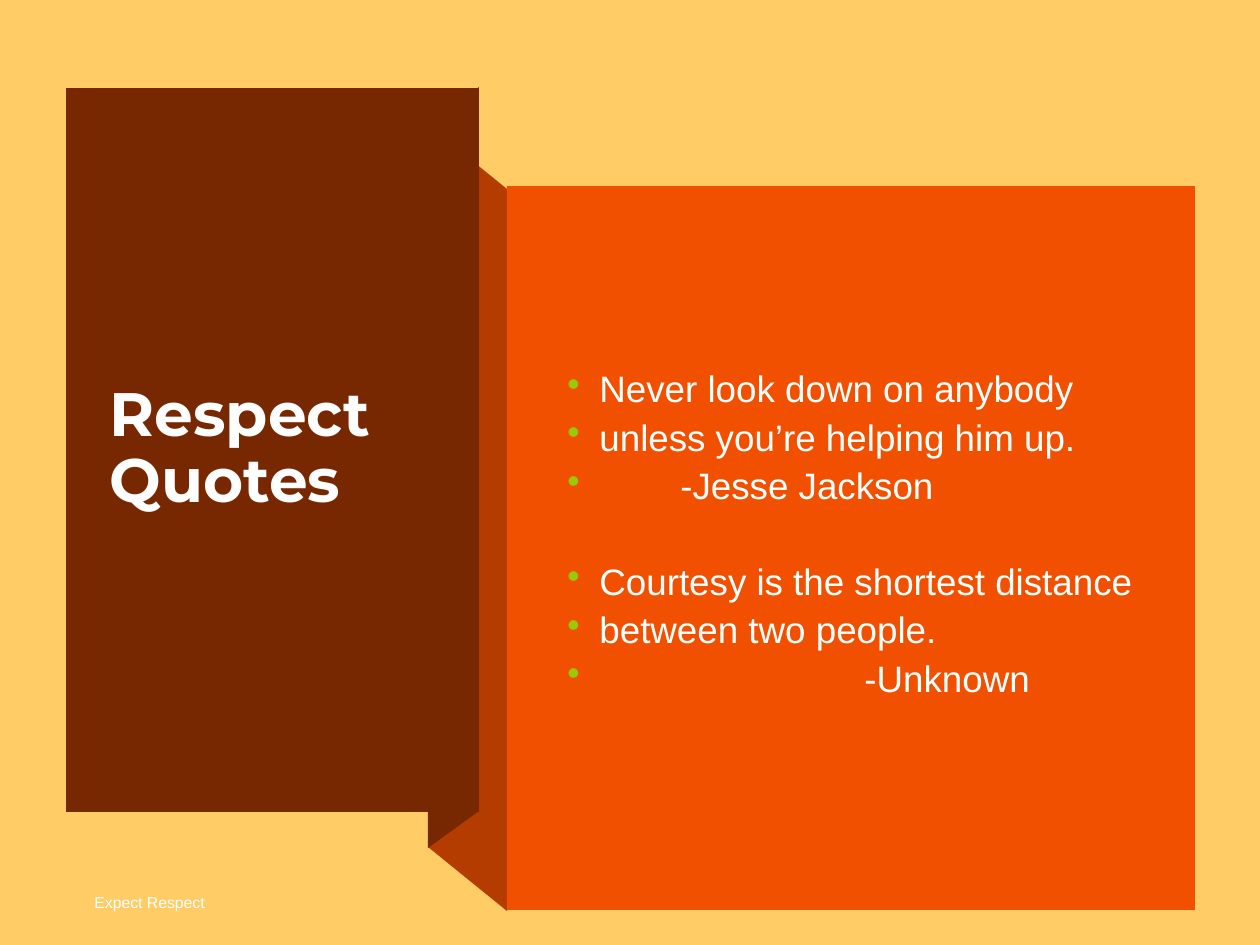
from lxml import etree
from pptx import Presentation
from pptx.dml.color import RGBColor
from pptx.enum.shapes import MSO_SHAPE
from pptx.enum.text import MSO_ANCHOR, MSO_AUTO_SIZE, PP_ALIGN
from pptx.oxml.ns import qn
from pptx.util import Pt

PX = 914400 / 126  # EMU per pixel
COLORS = {
    "sand": "FFCC66",
    "brown": "782800",
    "rust": "B43C00",
    "orange": "F05000",
    "bullet": "99CC00",
    "white": "FFFFFF",
    "body": "FEFFFF",
}


def color(name):
    return RGBColor.from_string(COLORS[name])


def px(*lengths):
    return [round(length * PX) for length in lengths]


deck = Presentation()
deck.slide_width, deck.slide_height = px(1260, 945)
page = deck.slides.add_slide(deck.slide_layouts[5])
page.background.fill.solid()
page.background.fill.fore_color.rgb = color("sand")

# Folded ribbon and panels, from back to front
panels = [
    ("rust", [(428, 125), (507, 189), (507, 911), (428, 847)]),
    ("brown", [(428, 123), (479, 87), (479, 811), (428, 848)]),
    ("brown", [(66, 88), (479, 88), (479, 812), (66, 812)]),
]
shapes = []
for fill, points in panels:
    builder = page.shapes.build_freeform(*points[0], scale=PX)
    builder.add_line_segments(points[1:], close=True)
    shapes.append((fill, builder.convert_to_shape()))
quote_panel = page.shapes.add_shape(MSO_SHAPE.RECTANGLE, *px(507, 186, 688, 724))
shapes.append(("orange", quote_panel))
for fill, shape in shapes:
    shape.shadow.inherit = False
    shape.fill.solid()
    shape.fill.fore_color.rgb = color(fill)
    shape.line.fill.background()

# Title, brought in front of the panels
title = page.shapes.title
title.left, title.top, title.width, title.height = px(97, 135, 350, 629)
page.shapes._spTree.append(title._element)
title.text_frame.text = "Respect Quotes"

# Quotes and footer
quotes = page.shapes.add_textbox(*px(539, 237, 615, 597))
footer = page.shapes.add_textbox(*px(82, 880, 698, 44))
footer.text_frame.text = "Expect Respect"

for box in (title, quotes, footer):
    frame = box.text_frame
    frame.word_wrap = True
    frame.auto_size = MSO_AUTO_SIZE.NONE
    frame.vertical_anchor = MSO_ANCHOR.MIDDLE

for box, font_name, size, bold in [
    (title, "Montserrat", 35, True),
    (footer, "Arial", 9, False),
]:
    para = box.text_frame.paragraphs[0]
    para.alignment = PP_ALIGN.LEFT
    para.font.name, para.font.size, para.font.bold = font_name, Pt(size), bold
    para.font.color.rgb = color("white")
title.text_frame.paragraphs[0].line_spacing = 0.9
footer.text_frame.paragraphs[0].space_after = Pt(6)

# Quote lines: text, text indent in px, space before in points
BULLET_INDENT = 16
lines = [
    ("Never look down on anybody", 48, 5),
    ("unless you’re helping him up.", 48, 5),
    ("-Jesse Jackson", 129, 5),
    ("Courtesy is the shortest distance", 48, 32),
    ("between two people.", 48, 5),
    ("-Unknown", 313, 5),
]
frame = quotes.text_frame
for index, (text, indent, space) in enumerate(lines):
    para = frame.add_paragraph() if index else frame.paragraphs[0]
    para.text = text
    para.line_spacing = 0.9
    para.space_before = Pt(space)
    para.font.name, para.font.size = "Arial", Pt(21)
    para.font.color.rgb = color("body")
    margin, hang = px(indent, BULLET_INDENT - indent)
    properties = para._p.get_or_add_pPr()
    properties.set("marL", str(margin))
    properties.set("indent", str(hang))
    # Bullet elements go after the spacing and before the font defaults
    bullet_color = etree.Element(qn("a:buClr"))
    etree.SubElement(bullet_color, qn("a:srgbClr"), val=COLORS["bullet"])
    bullet = etree.Element(qn("a:buChar"), char="•")
    defaults = properties.find(qn("a:defRPr"))
    defaults.addprevious(bullet_color)
    defaults.addprevious(bullet)

deck.save("out.pptx")
